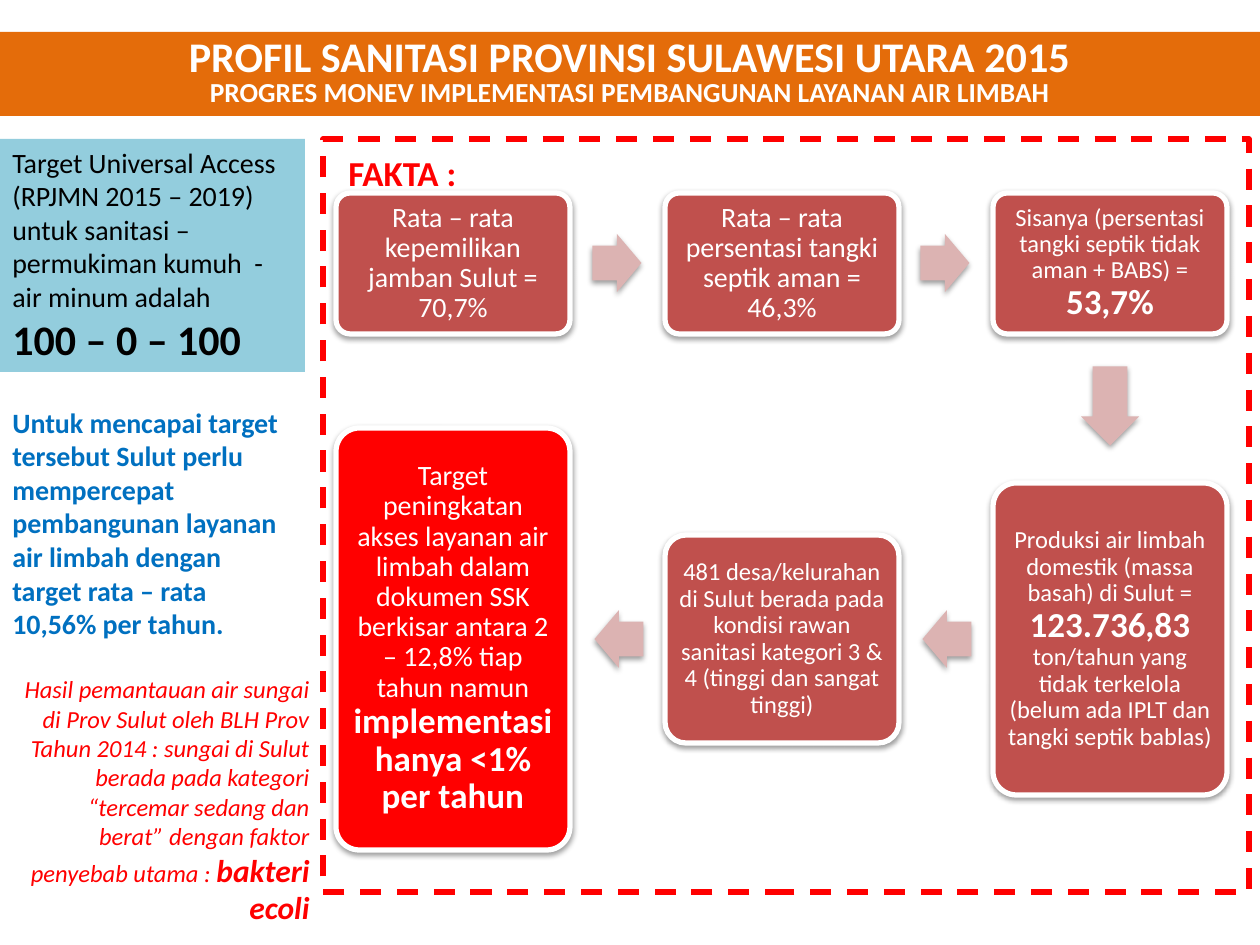
from lxml import etree
from pptx import Presentation
from pptx.dml.color import RGBColor
from pptx.enum.dml import MSO_LINE
from pptx.enum.shapes import MSO_SHAPE
from pptx.enum.text import MSO_ANCHOR, PP_ALIGN
from pptx.oxml import parse_xml
from pptx.util import Pt

RECTANGLE = MSO_SHAPE.RECTANGLE
ROUNDED = MSO_SHAPE.ROUNDED_RECTANGLE
ARROW = MSO_SHAPE.RIGHT_ARROW
LEFT, CENTER, RIGHT = PP_ALIGN.LEFT, PP_ALIGN.CENTER, PP_ALIGN.RIGHT
TOP, MIDDLE = MSO_ANCHOR.TOP, MSO_ANCHOR.MIDDLE
DASH = MSO_LINE.DASH

ORANGE = RGBColor(0xE4, 0x6C, 0x0A)
LIGHT_BLUE = RGBColor(0x93, 0xCD, 0xDD)
BLUE = RGBColor(0x00, 0x70, 0xC0)
BRICK = RGBColor(0xC0, 0x50, 0x4D)
PINK = RGBColor(0xDC, 0xB3, 0xB2)
RED = RGBColor(0xFF, 0x00, 0x00)
WHITE = RGBColor(0xFF, 0xFF, 0xFF)
BLACK = RGBColor(0x00, 0x00, 0x00)

PX = 914400 / 126
SHADOW = (
    '<a:effectLst xmlns:a="http://schemas.openxmlformats.org/drawingml/2006/main">'
    '<a:outerShdw blurRad="40000" dist="20000" dir="5400000" rotWithShape="0">'
    '<a:srgbClr val="000000"><a:alpha val="38000"/></a:srgbClr>'
    '</a:outerShdw></a:effectLst>'
)

presentation = Presentation()
presentation.slide_width = round(1260 * PX)
presentation.slide_height = round(945 * PX)
slide = presentation.slides.add_slide(presentation.slide_layouts[6])


def add_shape(kind, box, fill=None, line=None, shadow=False):
    """Add a preset shape; box is left, top, width, height in px."""
    shape = slide.shapes.add_shape(kind, *[round(value * PX) for value in box])
    shape.shadow.inherit = False
    if fill is None:
        shape.fill.background()
    else:
        shape.fill.solid()
        shape.fill.fore_color.rgb = fill
    if line is None:
        shape.line.fill.background()
    else:
        shape.line.color.rgb = line
        shape.line.width = Pt(3)
    if shadow:
        properties = shape._element.spPr
        effects = properties.find("{*}effectLst")
        properties.replace(effects, parse_xml(SHADOW))
    return shape


def write_text(shape, paragraphs, color, align=LEFT, anchor=TOP, spacing=None,
               inset=None, italic=False):
    """Fill a shape with paragraphs, each a list of (text, size, bold) runs."""
    frame = shape.text_frame
    frame.word_wrap = True
    frame.vertical_anchor = anchor
    if inset is not None:
        frame.margin_left = frame.margin_right = round(inset * PX)
        frame.margin_top = frame.margin_bottom = round(inset * PX)
    for index, runs in enumerate(paragraphs):
        paragraph = frame.add_paragraph() if index else frame.paragraphs[0]
        paragraph.alignment = align
        if spacing:
            paragraph.line_spacing = spacing
        for text, size, bold in runs:
            run = paragraph.add_run()
            run.text = text
            run.font.name = "Calibri"
            run.font.size = Pt(size)
            run.font.bold = bold
            run.font.italic = italic
            run.font.color.rgb = color


# Title banner and target panel
banner = add_shape(RECTANGLE, (0, 32, 1260, 84), ORANGE)
write_text(banner, [
    [("PROFIL SANITASI PROVINSI SULAWESI UTARA 2015", 24.1, True)],
    [("PROGRES MONEV IMPLEMENTASI PEMBANGUNAN LAYANAN AIR LIMBAH", 15.7, True)],
], WHITE, align=CENTER, anchor=MIDDLE, spacing=0.8)

target_panel = add_shape(RECTANGLE, (0, 139, 305, 233), LIGHT_BLUE)
write_text(target_panel, [
    [("Target Universal Access (RPJMN 2015 – 2019) untuk sanitasi – "
      "permukiman kumuh  - air minum adalah", 16, False)],
    [("100 – 0 – 100", 24, True)],
], BLACK)

# Flow of facts: three columns, two rows aligned on their centre lines
COLUMNS = [336, 665, 993]
STEP_WIDTH = 234
UPPER, LOWER = 263, 639

steps = [
    (0, UPPER, 141, BRICK, 9,
     [("Rata – rata kepemilikan jamban Sulut = 70,7%", 16, False)]),
    (1, UPPER, 141, BRICK, 9,
     [("Rata – rata persentasi tangki septik aman = 46,3%", 16, False)]),
    (2, UPPER, 141, BRICK, 8,
     [("Sisanya (persentasi tangki septik tidak aman + BABS) = ", 14, False),
      ("53,7%", 20, True)]),
    (2, LOWER, 312, BRICK, 8,
     [("Produksi air limbah domestik (massa basah) di Sulut = ", 14, False),
      ("123.736,83 ", 20, True),
      ("ton/tahun yang tidak terkelola (belum ada IPLT dan tangki septik bablas)",
       14, False)]),
    (1, LOWER, 208, BRICK, 8,
     [("481 desa/kelurahan di Sulut berada pada kondisi rawan sanitasi "
       "kategori 3 & 4 (tinggi dan sangat tinggi)", 14, False)]),
    (0, LOWER, 422, RED, 9,
     [("Target peningkatan akses layanan air limbah dalam dokumen SSK berkisar "
       "antara 2 – 12,8% tiap tahun namun ", 16, False),
      ("implementasi hanya <1% per tahun", 20, True)]),
]
for column, middle, height, fill, inset, runs in steps:
    box = (COLUMNS[column], middle - height // 2, STEP_WIDTH, height)
    step = add_shape(ROUNDED, box, fill, line=WHITE, shadow=True)
    step.adjustments[0] = 0.1
    write_text(step, [runs], WHITE, align=CENTER, anchor=MIDDLE, spacing=0.9,
               inset=inset)

# Block arrows: centre x, centre y, length, rotation
arrows = [
    (617, UPPER, 49, 0),
    (945, UPPER, 49, 0),
    (1110, 406, 79, 90),
    (947, LOWER, 49, 180),
    (619, LOWER, 49, 180),
]
for center, middle, length, rotation in arrows:
    box = (center - length / 2, middle - 29, length, 58)
    arrow = add_shape(ARROW, box, PINK, shadow=True)
    arrow.adjustments[0] = 0.6
    arrow.adjustments[1] = 0.5
    arrow.rotation = rotation

frame_border = add_shape(RECTANGLE, (323, 139, 926, 753), line=RED)
frame_border.line.dash_style = DASH

# Free text
notes = [
    ((336, 145, 325, 55), RED, LEFT, False, [("FAKTA :", 20, True)]),
    ((10, 668, 312, 267), RED, RIGHT, True,
     [("Hasil pemantauan air sungai di Prov Sulut oleh BLH Prov Tahun 2014 : "
       "sungai di Sulut berada pada kategori “tercemar sedang dan berat” dengan "
       "faktor penyebab utama : ", 14, False),
      ("bakteri ecoli", 18, True)]),
    ((0, 399, 305, 251), BLUE, LEFT, False,
     [("Untuk mencapai target tersebut Sulut perlu mempercepat pembangunan "
       "layanan air limbah dengan target rata – rata 10,56% per tahun.",
       16, True)]),
]
for box, color, align, italic, runs in notes:
    note = slide.shapes.add_textbox(*[round(value * PX) for value in box])
    write_text(note, [runs], color, align=align, italic=italic)

presentation.save("out.pptx")
